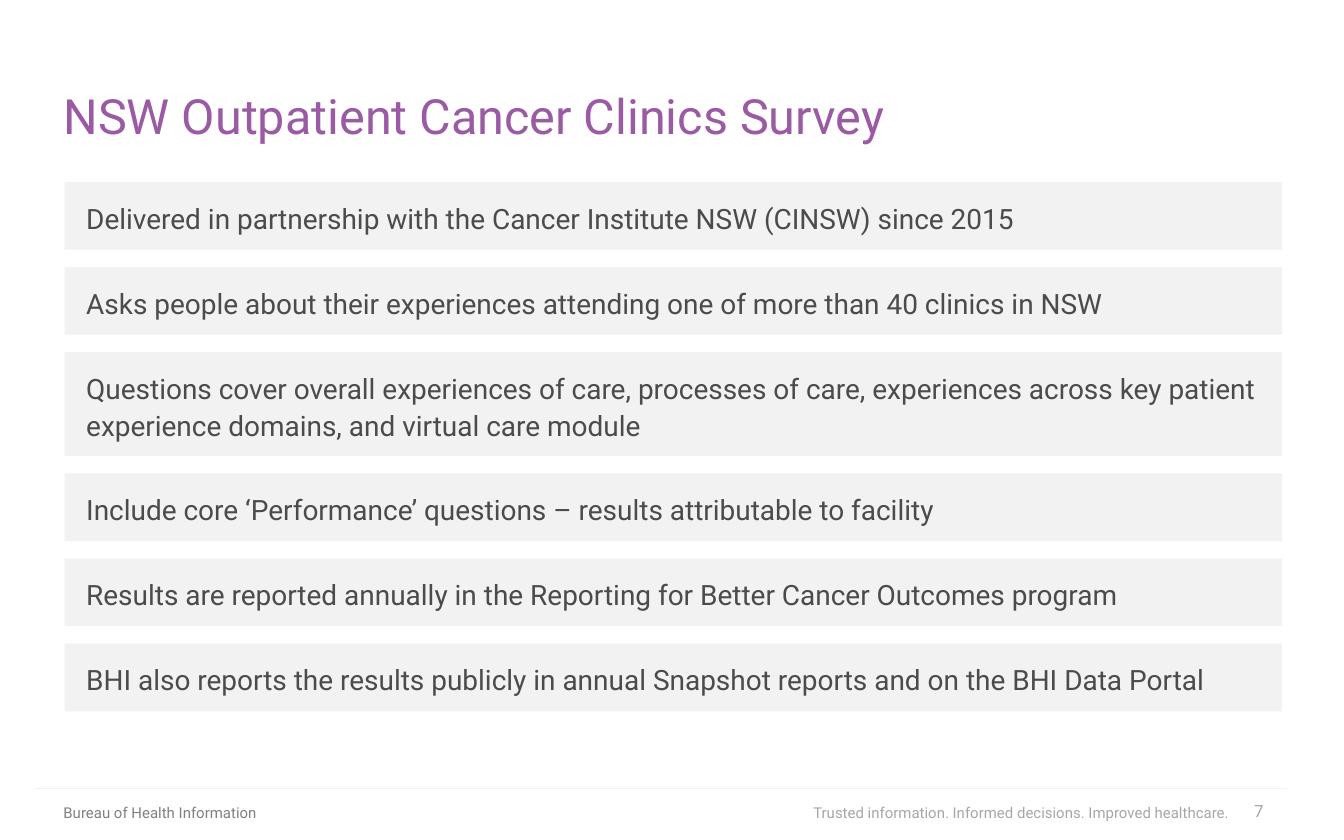
from pptx import Presentation
from pptx.dml.color import RGBColor
from pptx.enum.shapes import MSO_CONNECTOR, MSO_SHAPE
from pptx.enum.text import MSO_ANCHOR as Anchor, MSO_AUTO_SIZE as AutoSize, PP_ALIGN as Align
from pptx.oxml.ns import qn
from pptx.util import Cm, Pt
from lxml.etree import SubElement

PURPLE = RGBColor(0x9A, 0x5A, 0xA4)
CHARCOAL = RGBColor(0x4B, 0x4B, 0x4B)
MID_GREY = RGBColor(0x80, 0x80, 0x80)
SOFT_GREY = RGBColor(0xA6, 0xA6, 0xA6)
PALE_GREY = RGBColor(0xF2, 0xF2, 0xF2)

# Panel text and the number of lines it takes
SURVEY_FACTS = [
    ("Delivered in partnership with the Cancer Institute NSW (CINSW) since 2015", 1),
    ("Asks people about their experiences attending one of more than 40 clinics in NSW", 1),
    ("Questions cover overall experiences of care, processes of care, experiences across "
     "key patient experience domains, and virtual care module", 2),
    ("Include core ‘Performance’ questions – results attributable to facility", 1),
    ("Results are reported annually in the Reporting for Better Cancer Outcomes program", 1),
    ("BHI also reports the results publicly in annual Snapshot reports and on the "
     "BHI Data Portal", 1),
]
PANEL_LEFT, PANEL_TOP, PANEL_WIDTH = 1.22, 3.44, 23.01
PANEL_PAD_X, PANEL_PAD_Y = 0.41, 0.3
LINE_HEIGHT, PANEL_GAP = 0.68, 0.33


class SurveySlide:
    """Holds the font and the slide, and draws each kind of element."""

    def __init__(self, slide, font="Roboto"):
        self.slide = slide
        self.font = font

    def set_text(self, frame, words, size, color, align, pad_x=0, pad_y=0):
        frame.word_wrap = True
        frame.margin_left = frame.margin_right = Cm(pad_x)
        frame.margin_top = frame.margin_bottom = Cm(pad_y)
        paragraph = frame.paragraphs[0]
        paragraph.text = words
        paragraph.alignment = align
        paragraph.font.name = self.font
        paragraph.font.size = Pt(size)
        paragraph.font.color.rgb = color
        return paragraph

    def label(self, words, left, top, width, height, size, color,
              align=Align.LEFT, anchor=Anchor.MIDDLE):
        box = self.slide.shapes.add_textbox(Cm(left), Cm(top), Cm(width), Cm(height))
        self.set_text(box.text_frame, words, size, color, align)
        box.text_frame.vertical_anchor = anchor

    def panel(self, words, top, height):
        panel = self.slide.shapes.add_shape(
            MSO_SHAPE.RECTANGLE, Cm(PANEL_LEFT), Cm(top), Cm(PANEL_WIDTH), Cm(height))
        panel.shadow.inherit = False
        panel.fill.solid()
        panel.fill.fore_color.rgb = PALE_GREY
        panel.line.fill.background()
        frame = panel.text_frame
        paragraph = self.set_text(frame, words, 15, CHARCOAL, Align.LEFT,
                                  PANEL_PAD_X, PANEL_PAD_Y)
        paragraph.line_spacing = 1.1
        frame.vertical_anchor = Anchor.TOP
        frame.auto_size = AutoSize.SHAPE_TO_FIT_TEXT

    def rule(self, left, right, y):
        rule = self.slide.shapes.add_connector(
            MSO_CONNECTOR.STRAIGHT, Cm(left), Cm(y), Cm(right), Cm(y))
        rule.line.color.rgb = PALE_GREY
        rule.line.width = Pt(0.75)
        SubElement(rule._element.spPr, qn("a:effectLst"))


def main():
    deck = Presentation()
    deck.slide_width, deck.slide_height = Cm(25.4), Cm(15.88)
    survey = SurveySlide(deck.slides.add_slide(deck.slide_layouts[6]))

    # Footer
    survey.label("Bureau of Health Information", 1.2, 15.16, 5, 0.41, 8, MID_GREY)
    survey.label("Trusted information. Informed decisions. Improved healthcare.",
                 14.86, 15.16, 8.38, 0.41, 8, SOFT_GREY, Align.RIGHT)
    survey.label("7", 23.22, 15.12, 0.66, 0.41, 9, SOFT_GREY, Align.RIGHT)
    survey.rule(0.64, 24.33, 14.91)

    # Title
    survey.label("NSW Outpatient Cancer Clinics Survey", 1.2, 0.74, 23.01, 1.98,
                 26, PURPLE, anchor=Anchor.BOTTOM)

    # Stacked fact panels
    top = PANEL_TOP
    for fact, lines in SURVEY_FACTS:
        height = lines * LINE_HEIGHT + 2 * PANEL_PAD_Y
        survey.panel(fact, top, height)
        top += height + PANEL_GAP

    deck.save("out.pptx")


if __name__ == "__main__":
    main()
